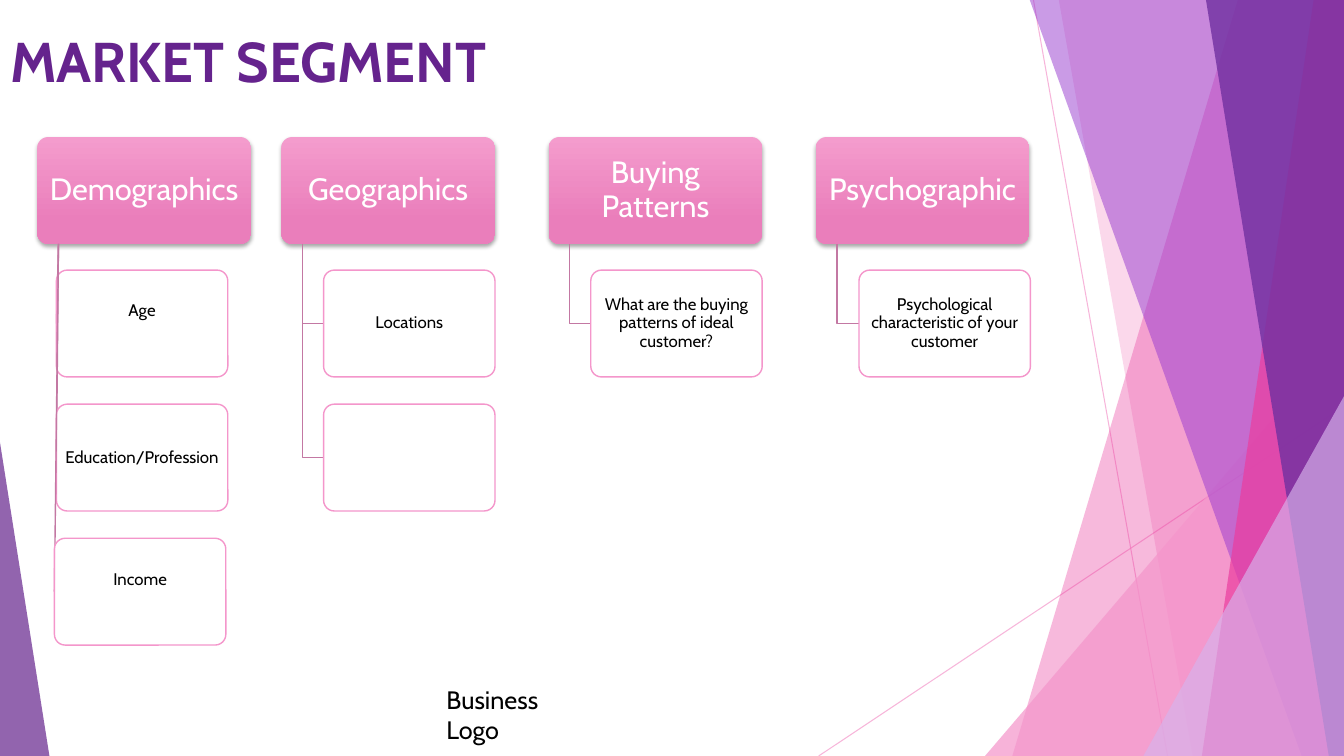
from dataclasses import dataclass

from lxml.etree import SubElement
from pptx import Presentation
from pptx.dml.color import RGBColor
from pptx.enum.shapes import MSO_CONNECTOR as Connector, MSO_SHAPE as Shape
from pptx.enum.text import MSO_ANCHOR as Anchor, MSO_AUTO_SIZE as AutoSize, PP_ALIGN as Align
from pptx.oxml.ns import qn
from pptx.util import Inches, Pt


@dataclass(frozen=True)
class Theme:
    font: str = "Cabin"
    purple: str = "65238D"
    deep_purple: str = "7030A0"
    violet: str = "9739CF"
    lilac: str = "D7B3EC"
    magenta: str = "EB3D9F"
    pink: str = "F496CB"
    header_top: str = "F49CCD"
    header_bottom: str = "EA7EBB"
    branch: str = "C378A3"
    white: str = "FFFFFF"
    black: str = "000000"
    title_size: int = 40
    header_size: int = 22
    logo_size: int = 18
    item_size: int = 12


THEME = Theme()
RIGHT, TOP, BOTTOM = 13.33, -0.01, 7.5
HEADER_TOP, HEADER_WIDTH, BOX_HEIGHT = 1.36, 2.12, 1.06
ITEM_TOP, ITEM_WIDTH, ITEM_STEP = 2.68, 1.7, 1.33
TRUNK_OFFSET = 0.21

RAYS = [(10.25, 0, 11.58, BOTTOM), (RIGHT, 4.03, 8.12, BOTTOM)]
FACETS = [
    (12.28, 10.04, THEME.magenta, 36),
    (10.5, 11.83, THEME.magenta, 20),
    (9.77, 3.33, 3.56, 4.17, 1, THEME.pink, 72),
    (10.21, 12.91, THEME.violet, 50),
    (13.03, 11.92, THEME.magenta, 70),
    (11.96, 13.18, THEME.deep_purple, 80),
    (11.34, 3.93, 1.99, 3.57, 1, THEME.lilac, 66),
    (0, 4.39, 0.49, 3.11, 0, THEME.purple, 70),
]
SEGMENTS = [
    ("Demographics", 0.37, [("Age", 0.56, 0.26), ("Education/Profession", 0.56, 0.02), ("Income", 0.54, 0.26)]),
    ("Geographics", 2.79, [("Locations", 3.21, 0.02), ("", 3.21, 0.02)]),
    ("Buying Patterns", 5.44, [("What are the buying patterns of ideal customer?", 5.86, 0.02)]),
    ("Psychographic", 8.09, [("Psychological characteristic of your customer", 8.52, 0.02)]),
]


def set_values(target, values):
    for name, value in values.items():
        setattr(target, name, value)


def set_alpha(shape, percent):
    for color in shape._element.spPr.iter(qn("a:srgbClr")):
        SubElement(color, qn("a:alpha"), val=str(percent * 1000))


def fill_shape(shape, color, alpha):
    shape.shadow.inherit = False
    shape.fill.solid()
    shape.fill.fore_color.rgb = RGBColor.from_string(color)
    set_alpha(shape, alpha)
    shape.line.fill.background()


def set_line(shape, color, width):
    shape.line.color.rgb = RGBColor.from_string(color)
    shape.line.width = Pt(width)


def write_text(shape, text, size, color, frame_values, paragraph_values, bold=False):
    frame = shape.text_frame
    set_values(frame, {"word_wrap": True, **frame_values})
    if not text:
        return
    frame.text = text
    paragraph = frame.paragraphs[0]
    set_values(paragraph, paragraph_values)
    font = paragraph.runs[0].font
    set_values(font, {"name": THEME.font, "size": Pt(size), "bold": bold})
    font.color.rgb = RGBColor.from_string(color)


def write_box_text(shape, text, size, color, side, top, bottom):
    margins = {"margin_left": side, "margin_right": side, "margin_top": top, "margin_bottom": bottom}
    frame_values = {name: Inches(value) for name, value in margins.items()}
    frame_values["vertical_anchor"] = Anchor.MIDDLE
    write_text(shape, text, size, color, frame_values, {"alignment": Align.CENTER, "line_spacing": 0.9})


def add_straight_line(slide, x1, y1, x2, y2, color, width):
    line = slide.shapes.add_connector(Connector.STRAIGHT, Inches(x1), Inches(y1), Inches(x2), Inches(y2))
    set_line(line, color, width)
    SubElement(line._element.spPr, qn("a:effectLst"))
    return line


def add_outline(slide, points, close):
    corners = [(Inches(x), Inches(y)) for x, y in points]
    builder = slide.shapes.build_freeform(*corners[0])
    builder.add_line_segments(corners[1:], close=close)
    return builder.convert_to_shape()


def add_facet(slide, top_x, bottom_x, color, alpha):
    points = [(top_x, TOP), (RIGHT, TOP), (RIGHT, BOTTOM), (bottom_x, BOTTOM)]
    fill_shape(add_outline(slide, points, True), color, alpha)


def add_triangle(slide, left, top, width, height, apex, color, alpha):
    triangle = slide.shapes.add_shape(
        Shape.ISOSCELES_TRIANGLE, Inches(left), Inches(top), Inches(width), Inches(height))
    triangle.adjustments[0] = apex
    fill_shape(triangle, color, alpha)


def add_rounded_box(slide, left, top, width):
    box = slide.shapes.add_shape(
        Shape.ROUNDED_RECTANGLE, Inches(left), Inches(top), Inches(width), Inches(BOX_HEIGHT))
    box.adjustments[0] = 0.1
    box.shadow.inherit = False
    return box


def add_header(slide, text, left):
    header = add_rounded_box(slide, left, HEADER_TOP, HEADER_WIDTH)
    header.line.fill.background()
    header.fill.gradient()
    header.fill.gradient_angle = 270
    stops = [(0, THEME.header_top), (0.78, THEME.header_bottom)]
    for stop, (position, color) in zip(header.fill.gradient_stops, stops):
        stop.position = position
        stop.color.rgb = RGBColor.from_string(color)
    effects = header._element.spPr.find(qn("a:effectLst"))
    shadow = SubElement(effects, qn("a:outerShdw"), blurRad=str(Pt(3)), dist=str(Pt(2)),
                        dir="5400000", rotWithShape="0")
    shade = SubElement(shadow, qn("a:srgbClr"), val=THEME.black)
    SubElement(shade, qn("a:alpha"), val="35000")
    write_box_text(header, text, THEME.header_size, THEME.white, 0.05, 0.03, 0.03)


def add_item(slide, text, left, top, bottom_margin):
    item = add_rounded_box(slide, left, top, ITEM_WIDTH)
    fill_shape(item, THEME.white, 90)
    set_line(item, THEME.pink, 1)
    write_box_text(item, text, THEME.item_size, THEME.black, 0.03, 0.02, bottom_margin)
    return item


def add_elbow(slide, trunk, start, end, item_left):
    elbow = add_outline(slide, [(trunk, start), (trunk, end), (item_left, end)], False)
    elbow.shadow.inherit = False
    elbow.fill.background()
    set_line(elbow, THEME.branch, 1)


def add_segment(slide, name, left, items):
    add_header(slide, name, left)
    trunk, start = left + TRUNK_OFFSET, HEADER_TOP + BOX_HEIGHT
    for index, (text, item_left, bottom_margin) in enumerate(items):
        top = ITEM_TOP + index * ITEM_STEP
        middle = top + BOX_HEIGHT / 2
        if item_left > trunk:
            add_elbow(slide, trunk, start, middle, item_left)
            add_item(slide, text, item_left, top, bottom_margin)
        else:
            branch = add_straight_line(slide, trunk, start, item_left, middle, THEME.branch, 1)
            branch.end_connect(add_item(slide, text, item_left, top, bottom_margin), 1)


def add_background(slide):
    for ray in RAYS:
        set_alpha(add_straight_line(slide, *ray, THEME.pink, 0.75), 70)
    for facet in FACETS:
        draw = add_facet if len(facet) == 4 else add_triangle
        draw(slide, *facet)


def add_title(slide, text):
    title = slide.shapes.title
    set_values(title, {"left": Inches(0), "top": Inches(0.21), "width": Inches(12.13), "height": Inches(0.77)})
    write_text(title, text, THEME.title_size, THEME.purple,
               {"vertical_anchor": Anchor.TOP, "auto_size": AutoSize.NONE},
               {"alignment": Align.LEFT}, bold=True)


def add_logo_label(slide, text):
    label = slide.shapes.add_textbox(Inches(4.33), Inches(6.74), Inches(1.46), Inches(0.71))
    write_text(label, text, THEME.logo_size, THEME.black, {}, {"alignment": Align.LEFT})


def main():
    presentation = Presentation()
    set_values(presentation, {"slide_width": Inches(RIGHT), "slide_height": Inches(BOTTOM)})
    slide = presentation.slides.add_slide(presentation.slide_layouts[5])
    add_background(slide)
    add_title(slide, "MARKET SEGMENT")
    add_logo_label(slide, "Business Logo")
    for segment in SEGMENTS:
        add_segment(slide, *segment)
    presentation.save("out.pptx")


if __name__ == "__main__":
    main()
